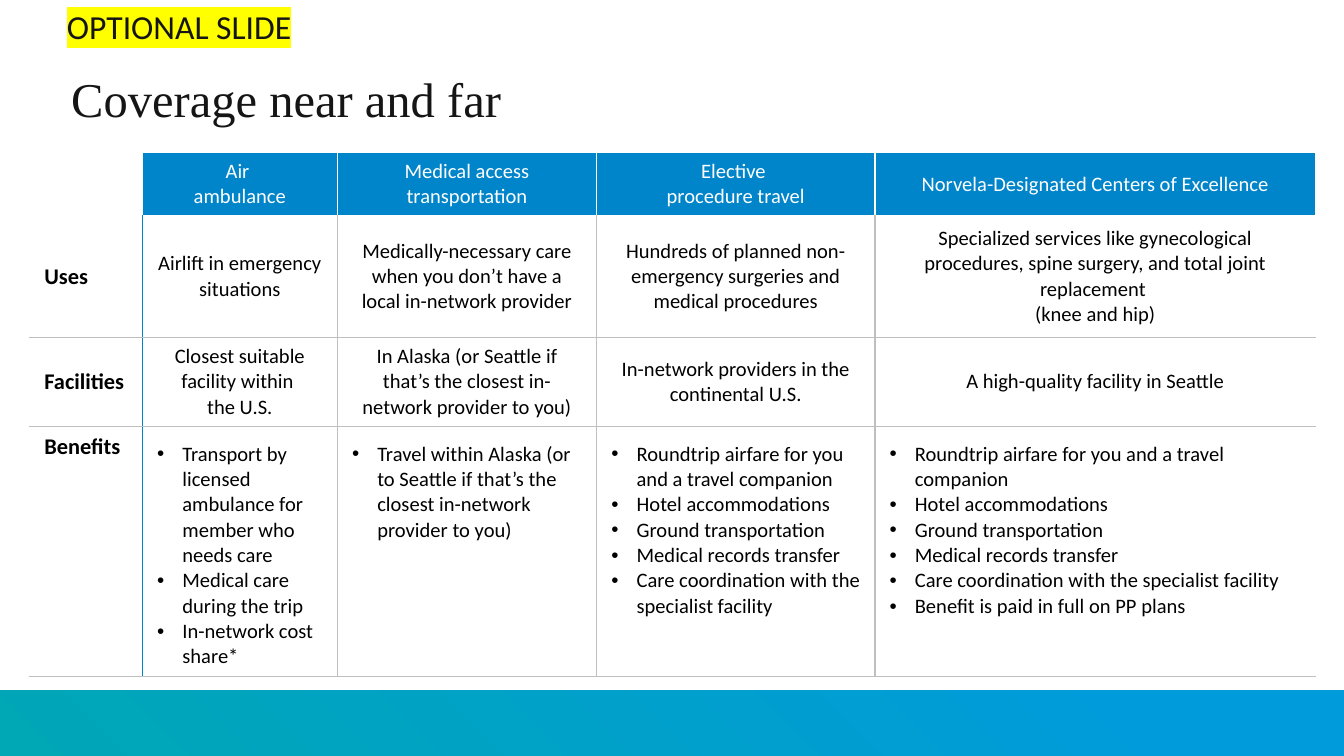
from copy import deepcopy

from lxml import etree
from pptx import Presentation
from pptx.dml.color import RGBColor
from pptx.enum.shapes import MSO_SHAPE
from pptx.enum.text import MSO_ANCHOR, MSO_AUTO_SIZE, PP_ALIGN
from pptx.oxml.ns import qn
from pptx.util import Inches, Pt

RECT = MSO_SHAPE.RECTANGLE
TOP, MIDDLE, BOTTOM = MSO_ANCHOR.TOP, MSO_ANCHOR.MIDDLE, MSO_ANCHOR.BOTTOM
LEFT, CENTER = PP_ALIGN.LEFT, PP_ALIGN.CENTER
FIXED, GROW = MSO_AUTO_SIZE.NONE, MSO_AUTO_SIZE.SHAPE_TO_FIT_TEXT

WIDE = 10
HIGH = WIDE * 9 / 16
BAND = 0.49
COLS = [0.84, 1.45, 1.93, 2.07, 3.28]
ROWS = [0.41, 0.9, 0.57, 1.6]
INDENT = Pt(13.5)

COLORS = {
    "head": "0085CA", "line": "BFBFBF", "white": "FFFFFF", "black": "000000",
    "ink": "151515", "mark": "FFFF00", "blue": "009BDB", "teal": "00A7B5",
}

TRAVEL = [
    "Roundtrip airfare for you and a travel companion",
    "Hotel accommodations",
    "Ground transportation",
    "Medical records transfer",
    "Care coordination with the specialist facility",
]

# A vertical tab is a line break within a paragraph.
HEADS = ["", "Air \vambulance", "Medical access transportation",
         "Elective \vprocedure travel",
         "Norvela-Designated Centers of Excellence"]
USES = ["Uses", "Airlift in emergency situations",
        "Medically-necessary care when you don’t have a local in-network provider",
        "Hundreds of planned non-emergency surgeries and medical procedures",
        "Specialized services like gynecological procedures, spine surgery, "
        "and total joint replacement \v(knee and hip)"]
PLACES = ["Facilities", "Closest suitable facility within \vthe U.S.",
          "In Alaska (or Seattle if that’s the closest in-network provider to you)",
          "In-network providers in the continental U.S.",
          "A high-quality facility in Seattle"]
GAINS = ["Benefits",
         ["Transport by licensed ambulance for member who needs care",
          "Medical care during the trip", "In-network cost share*"],
         ["Travel within Alaska (or to Seattle if that’s the closest "
          "in-network provider to you)"],
         TRAVEL,
         TRAVEL + ["Benefit is paid in full on PP plans"]]


def rgb(name):
    return RGBColor.from_string(COLORS[name])


def add_bullet(para):
    props = para._p.get_or_add_pPr()
    props.set("marL", str(INDENT))
    props.set("indent", str(-INDENT))
    etree.SubElement(props, qn("a:buFont"), typeface="Arial")
    etree.SubElement(props, qn("a:buChar"), char="•")


def put_text(frame, lines, size=11, font="Calibri", color="black", bold=False,
             align=LEFT, bullet=False, mark=None):
    """Fill a text frame with one paragraph per line, all in one format."""
    frame.word_wrap = True
    for i, line in enumerate(lines):
        para = frame.add_paragraph() if i else frame.paragraphs[0]
        para.text = line
        para.alignment = align
        if bullet:
            add_bullet(para)
        for run in para.runs:
            run.font.size, run.font.bold = Pt(size), bold
            run.font.name = font
            run.font.color.rgb = rgb(color)
            if mark:
                light = etree.Element(qn("a:highlight"))
                etree.SubElement(light, qn("a:srgbClr"), val=COLORS[mark])
                run._r.rPr.find(qn("a:solidFill")).addnext(light)
        for gap in para._p.findall(qn("a:br")):
            gap.append(deepcopy(para.runs[0]._r.rPr))


def set_edges(cell, edges):
    """Draw the left, right, top and bottom borders from (colour, points)."""
    props = cell._tc.get_or_add_tcPr()
    for i, (side, (color, width)) in enumerate(zip("LRTB", edges)):
        line = etree.Element(qn("a:ln" + side), w=str(Pt(width)))
        fill = etree.SubElement(line, qn("a:solidFill"))
        etree.SubElement(fill, qn("a:srgbClr"), val=COLORS[color])
        props.insert(i, line)


def pick_edges(row, col):
    white, rule, thin = ("white", 1), ("line", 1), ("line", 0.5)
    if row == 0:
        return [white, white, white, white]
    sides = [white, ("head", 1), rule, rule, rule, white]
    return [sides[col], sides[col + 1], white if row == 1 else thin, thin]


def fill_cell(cell, row, col, value):
    listed = isinstance(value, list)
    cell.margin_left = Inches(0.11)
    cell.margin_right = Inches(0.1 if listed else 0.11)
    cell.margin_top = Inches(0.11 if listed else 0.05)
    cell.margin_bottom = Inches(0.05)
    cell.vertical_anchor = TOP if row == len(ROWS) - 1 else MIDDLE
    if col:
        cell.fill.solid()
        cell.fill.fore_color.rgb = rgb("white" if row else "head")
    else:
        cell.fill.background()
    set_edges(cell, pick_edges(row, col))
    if listed:
        put_text(cell.text_frame, value, bullet=True)
    elif col:
        put_text(cell.text_frame, [value], align=CENTER,
                 color="black" if row else "white")
    elif value:
        put_text(cell.text_frame, [value], size=12, bold=True)


def add_grid(slide, left, top, height, data):
    frame = slide.shapes.add_table(
        len(ROWS), len(COLS), Inches(left), Inches(top),
        Inches(sum(COLS)), Inches(height))
    grid = frame.table
    grid.first_row = grid.horz_banding = False
    for col, width in zip(grid.columns, COLS):
        col.width = Inches(width)
    for r, values in enumerate(data):
        grid.rows[r].height = Inches(ROWS[r])
        for c, value in enumerate(values):
            fill_cell(grid.cell(r, c), r, c, value)
    frame.height = Inches(height)


def add_band(slide):
    band = slide.shapes.add_shape(
        RECT, 0, Inches(HIGH - BAND), Inches(WIDE), Inches(BAND))
    band.rotation = 180
    band.shadow.inherit = False
    band.line.fill.background()
    band.fill.gradient()
    band.fill.gradient_angle = 45
    stops = [(0.15, "blue"), (1, "teal")]
    for stop, (place, color) in zip(band.fill.gradient_stops, stops):
        stop.position = place
        stop.color.rgb = rgb(color)


def set_title(slide, text):
    title = slide.shapes.title
    title.left, title.top = Inches(0.53), Inches(0.46)
    title.width, title.height = Inches(7.86), Inches(0.54)
    frame = title.text_frame
    frame.auto_size = FIXED
    frame.margin_left = 0
    frame.vertical_anchor = BOTTOM
    put_text(frame, [text], size=26, font="Times New Roman", color="ink")


def add_note(slide, text):
    box = slide.shapes.add_textbox(
        Inches(0.4), Inches(-0.01), Inches(8.98), Inches(0.4))
    box.text_frame.auto_size = GROW
    box.text_frame.vertical_anchor = BOTTOM
    put_text(box.text_frame, [text], size=18, color="ink", mark="mark")


def main():
    deck = Presentation()
    deck.slide_width, deck.slide_height = Inches(WIDE), Inches(HIGH)
    slide = deck.slides.add_slide(deck.slide_layouts[5])
    add_band(slide)
    set_title(slide, "Coverage near and far")
    add_grid(slide, 0.22, 1.13, 3.81, [HEADS, USES, PLACES, GAINS])
    add_note(slide, "OPTIONAL SLIDE")
    deck.save("out.pptx")


if __name__ == "__main__":
    main()
